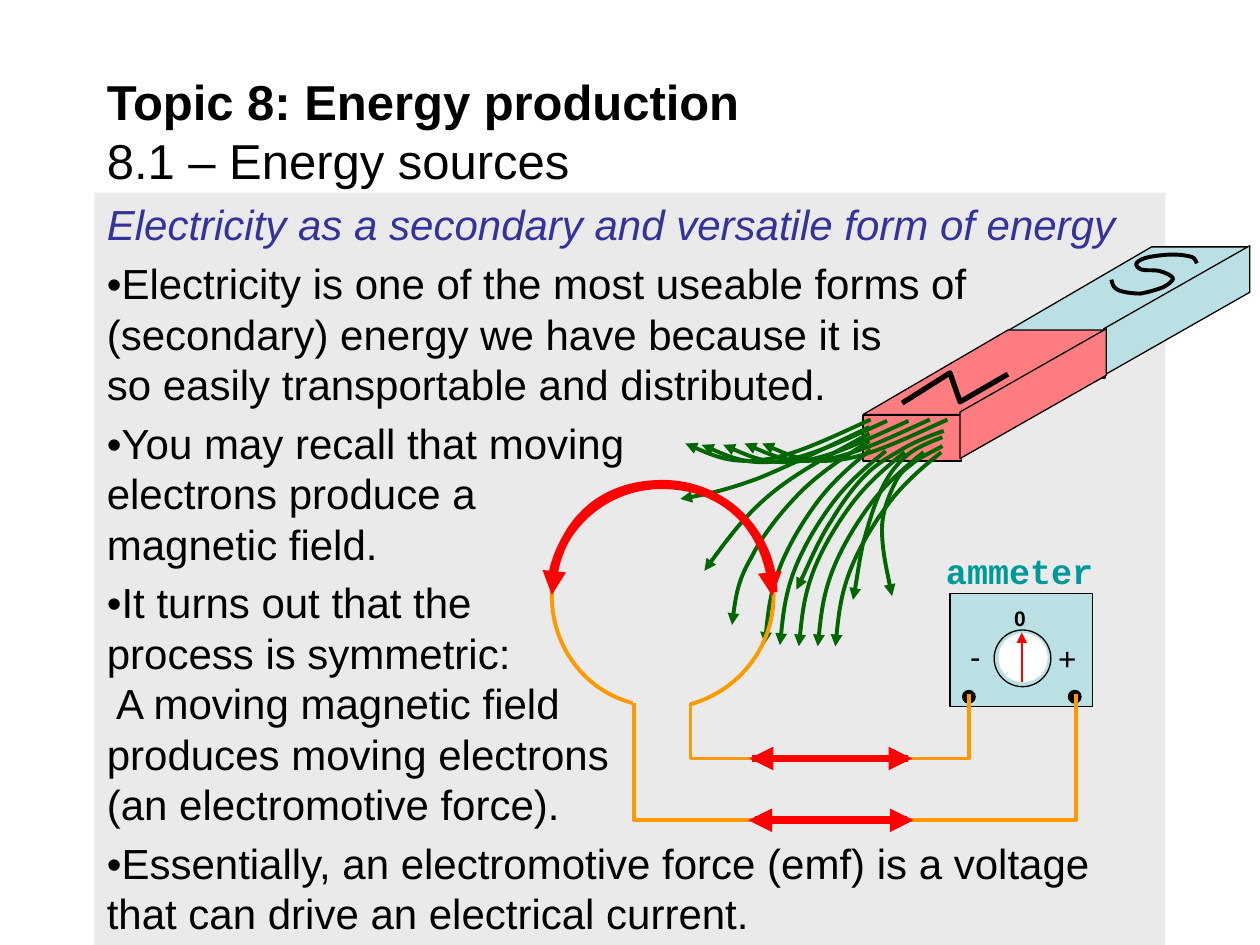
"""Build a slide on electricity with a magnet, its field, a wire loop and an ammeter."""
import math
import pptx
import pptx.util
import pptx.oxml.ns
import pptx.dml.color
import pptx.enum.shapes
import pptx.enum.text
import lxml.etree

COLS, ROWS = 10, 7.5
CELL = pptx.util.Inches(1)
KINDS = pptx.enum.shapes.MSO_SHAPE

THEME = {
    "ink": "000000", "panel": "EAEAEA", "head": "333399", "pale": "BBE0E3",
    "rose": "FF7C80", "field": "006600", "wire": "FF9900", "flow": "FF0000",
    "label": "009999", "white": "FFFFFF",
    "sans": "Arial", "mono": "Courier New",
    "title": 28, "body": 24, "name": 20, "sign": 18, "zero": 12,
    "thin": 0.75, "mid": 2.25, "bold": 3, "thick": 4.5, "hand": 1.5,
}

TITLE = ["Topic 8: Energy production\v", "8.1 – Energy sources"]
TOPIC = "Electricity as a secondary and versatile form of energy"
POINTS = [
    "•Electricity is one of the most useable forms of\v(secondary) energy we have "
    "because it is\vso easily transportable and distributed.",
    "•You may recall that moving\velectrons produce a\vmagnetic field.",
    "•It turns out that the\vprocess is symmetric:\v A moving magnetic field\v"
    "produces moving electrons\v(an electromotive force).",
    "•Essentially, an electromotive force (emf) is a voltage that can drive "
    "an electrical current.",
]

HALVES = [("pale", 7.99, 2.64), ("rose", 6.85, 3.3)]
FACES = [
    [(0, -0.01), (1.15, -0.68), (1.93, -0.68), (0.77, -0.01), (0, -0.01)],
    [(0.77, 0.34), (0.77, -0.03), (1.93, -0.69), (1.93, -0.32), (0.77, 0.34)],
]
NORTH = [(7.16, 3.2), (7.54, 2.96), (7.62, 3.19), (8, 2.97)]
SOUTH = [
    (9.5, 2.09), (9.49, 2.08), (9.49, 2.05), (9.46, 2.04), (9.43, 2.03), (9.37, 2.02),
    (9.31, 2.02), (9.25, 2.02), (9.17, 2.03), (9.12, 2.04), (9.07, 2.05), (9.03, 2.07),
    (9.02, 2.09), (9.01, 2.1), (9.03, 2.13), (9.06, 2.14), (9.09, 2.15), (9.16, 2.14),
    (9.2, 2.15), (9.24, 2.16), (9.31, 2.19), (9.31, 2.21), (9.31, 2.23), (9.27, 2.26),
    (9.23, 2.28), (9.18, 2.3), (9.11, 2.32), (9.05, 2.33), (8.99, 2.33), (8.91, 2.32),
    (8.87, 2.3), (8.83, 2.28), (8.83, 2.25), (8.82, 2.22),
]
DOWN = [(6.91, 3.57), (6.76, 3.69), (6.61, 3.82), (6.49, 3.98), (6.37, 4.14),
        (6.25, 4.34), (6.18, 4.53), (6.11, 4.72), (6.09, 4.92), (6.07, 5.11)]
SIDE = [(6.91, 3.33), (6.6, 3.47), (6.3, 3.62), (6.05, 3.65), (5.8, 3.68),
        (5.62, 3.6), (5.44, 3.52)]
STAY = [(0, 0)]
FIELD = [
    ([(6.9, 3.5), (6.71, 3.62), (6.51, 3.75), (6.36, 3.9), (6.2, 4.06), (6.05, 4.25),
      (5.96, 4.43), (5.86, 4.6), (5.83, 4.78), (5.81, 4.96)], STAY, -5.8),
    (DOWN, STAY, -3.7),
    ([(6.9, 3.44), (6.63, 3.59), (6.35, 3.73), (6.13, 3.91), (5.91, 4.09),
      (5.75, 4.31), (5.59, 4.53)], STAY, 0),
    ([(6.9, 3.39), (6.58, 3.54), (6.26, 3.7), (6.01, 3.8), (5.76, 3.89),
      (5.58, 3.93), (5.4, 3.96)], STAY, 0),
    (SIDE, STAY, 0),
    (DOWN, [(0.12, 0.01), (0.27, 0.02), (0.42, 0.02), (0.56, 0.02)], -3.7),
    (SIDE, [(0.13, 0.01), (0.3, 0.01), (0.47, 0), (0.61, 0)], 0),
    ([(7.48, 3.54), (7.39, 3.59), (7.3, 3.63), (7.24, 3.68), (7.18, 3.73), (7.14, 3.75),
      (7.1, 3.84), (7.06, 3.92), (7, 4.06), (7, 4.2), (7, 4.35), (7.04, 4.54),
      (7.08, 4.73)], STAY, 0),
    ([(7.48, 3.47), (7.43, 3.49), (7.26, 3.55), (7.18, 3.63), (7.1, 3.7), (7.03, 3.8),
      (6.98, 3.92), (6.93, 4.03), (6.89, 4.17), (6.85, 4.31), (6.82, 4.45),
      (6.79, 4.67), (6.77, 4.76)], STAY, 0),
    ([(7.49, 3.42), (7.43, 3.44), (7.27, 3.5), (7.17, 3.56), (7.07, 3.62), (6.97, 3.67),
      (6.87, 3.77), (6.78, 3.86), (6.69, 3.98), (6.6, 4.13), (6.5, 4.28),
      (6.38, 4.57), (6.32, 4.68)], STAY, 0),
]
LOOP = [(5.02, 5.58), (4.64, 5.48), (4.38, 5.13), (4.38, 4.73), (4.38, 4.25),
        (4.77, 3.85), (5.26, 3.85), (5.74, 3.85), (6.14, 4.25), (6.14, 4.73),
        (6.14, 5.13), (5.87, 5.48), (5.48, 5.59)]
SWINGS = [
    [(4.38, 4.58), (4.45, 4.16), (4.82, 3.85), (5.25, 3.85), (5.74, 3.85),
     (6.13, 4.25), (6.13, 4.73)],
    [(6.14, 4.7), (6.13, 4.22), (5.74, 3.84), (5.26, 3.84), (4.77, 3.84),
     (4.38, 4.23), (4.38, 4.72)],
]
LEADS = [(5.03, 6.51, 8.54), (5.48, 6.02, 7.69)]
FLOWS = [(5.97, 7.24, 6.02, "tail"), (5.94, 7.2, 6.51, "head"),
         (5.99, 7.25, 6.51, "tail"), (5.95, 7.21, 6.02, "head")]
DIAL = [
    (KINDS.RECTANGLE, (7.54, 4.71, 1.13, 0.9), "pale", "ink"),
    (KINDS.OVAL, (7.89, 5, 0.45, 0.45), None, "ink"),
]
STUDS = [
    (KINDS.OVAL, (7.64, 5.48, 0.1, 0.1), "ink", "ink"),
    (KINDS.OVAL, (8.48, 5.48, 0.1, 0.1), "ink", "ink"),
    (KINDS.OVAL, (7.93, 5.03, 0.38, 0.38), "white", "white"),
]
SIGNS = [("-", (7.6, 5.01, 0.31, 0.4), "sign", False),
         ("0", (7.95, 4.76, 0.42, 0.3), "zero", True),
         ("+", (8.3, 5.02, 0.31, 0.4), "sign", False)]

deck = pptx.Presentation()
deck.slide_width, deck.slide_height = int(COLS * CELL), int(ROWS * CELL)
slide = deck.slides.add_slide(deck.slide_layouts[6])
parts = slide.shapes


def grid(nums):
    return [round(n * CELL) for n in nums]


def tint(name):
    return pptx.dml.color.RGBColor.from_string(THEME[name])


def stroke(shape, line, width="thin", end=None):
    shape.line.color.rgb = tint(line)
    shape.line.width = pptx.util.Pt(THEME[width])
    if end:
        edge = shape.element.spPr.find(pptx.oxml.ns.qn("a:ln"))
        lxml.etree.SubElement(edge, pptx.oxml.ns.qn(f"a:{end}End"), type="triangle")


def paint(shape, fill):
    shape.shadow.inherit = False
    if fill:
        shape.fill.solid()
        shape.fill.fore_color.rgb = tint(fill)
    else:
        shape.fill.background()


def block(kind, box, fill=None, line=None):
    shape = parts.add_shape(kind, *grid(box))
    paint(shape, fill)
    if line:
        stroke(shape, line)
    else:
        shape.line.fill.background()
    return shape


def trace(dots, fill=None, line="ink", width="thin", end=None, close=False):
    dots = [grid(dot) for dot in dots]
    pen = parts.build_freeform(*dots[0], scale=1.0)
    pen.add_line_segments(dots[1:], close=close)
    shape = pen.convert_to_shape()
    paint(shape, fill)
    stroke(shape, line, width, end)
    return shape


def curve(knots, line="ink", width="mid", end=None, turn=0):
    shape = trace(spin(knots, -turn), None, line, width, end)
    shape.rotation = turn % 360
    legs = list(shape.element.iter(pptx.oxml.ns.qn("a:lnTo")))
    for k in range(0, len(legs), 3):
        bend = lxml.etree.Element(pptx.oxml.ns.qn("a:cubicBezTo"))
        legs[k].addprevious(bend)
        for leg in legs[k:k + 3]:
            bend.append(leg[0])
            leg.getparent().remove(leg)


def spin(knots, turn):
    if not turn:
        return knots
    cos, sin = math.cos(math.radians(turn)), math.sin(math.radians(turn))
    flat = [(x * cos - y * sin, x * sin + y * cos) for x, y in knots]
    mid = [(min(side) + max(side)) / 2 for side in zip(*flat)]
    hub = (mid[0] * cos + mid[1] * sin, mid[1] * cos - mid[0] * sin)
    return [(x - mid[0] + hub[0], y - mid[1] + hub[1]) for x, y in flat]


def arrow(start, stop, width, end):
    link = parts.add_connector(pptx.enum.shapes.MSO_CONNECTOR.STRAIGHT,
                               *grid(start + stop))
    stroke(link, "flow", width, end)
    lxml.etree.SubElement(link.element.spPr, pptx.oxml.ns.qn("a:effectLst"))


def write(para, text, size="body", font="sans", ink="ink", bold=False, slant=False, gap=0):
    para.alignment = pptx.enum.text.PP_ALIGN.LEFT
    para.space_before = pptx.util.Pt(gap * THEME[size])
    for n, piece in enumerate(text.split("\v")):
        if n:
            para.add_line_break()
        if piece:
            run = para.add_run()
            run.text = piece
            run.font.name, run.font.size = THEME[font], pptx.util.Pt(THEME[size])
            run.font.bold, run.font.italic = bold, slant
            run.font.color.rgb = tint(ink)


def frame(box, wrap=True):
    text = parts.add_textbox(*grid(box)).text_frame
    text.word_wrap = wrap
    return text


panel = block(KINDS.RECTANGLE, (0.75, 1.53, 8.5, 5.97), "panel").text_frame
panel.word_wrap = True
panel.vertical_anchor = pptx.enum.text.MSO_ANCHOR.TOP
write(panel.paragraphs[0], TOPIC, ink="head", slant=True, gap=0.2)
for point in POINTS:
    write(panel.add_paragraph(), point, gap=0.2)

title = frame((0.75, 0.58, 8.5, 0.91))
title.vertical_anchor = pptx.enum.text.MSO_ANCHOR.MIDDLE
for row, bold in zip(TITLE, (True, False)):
    write(title.paragraphs[0], row, size="title", bold=bold)

for item in DIAL:
    block(*item)
for sign, box, size, bold in SIGNS:
    write(frame(box).paragraphs[0], sign, size=size, bold=bold, gap=0.5)
for item in STUDS:
    block(*item)

for fill, x, y in HALVES:
    block(KINDS.RECTANGLE, (x, y, 0.78, 0.36), fill, "ink")
    for face in FACES:
        trace([(x + a, y + b) for a, b in face], fill, close=True)
trace(NORTH, width="bold")
curve(SOUTH)
for knots, shifts, turn in FIELD:
    for dx, dy in shifts:
        curve([(x + dx, y + dy) for x, y in knots], "field", end="tail", turn=turn)

curve(LOOP, "wire")
for left, low, right in LEADS:
    trace([(left, 5.58), (left, low), (right, low), (right, 5.51)], None, "wire", "mid")
for swing in SWINGS:
    curve(swing, "flow", "thick", "tail")
for left, right, y, end in FLOWS:
    arrow((left, y), (right, y), "thick", end)
write(frame((7.41, 4.31, 1.37, 0.43), wrap=False).paragraphs[0], "ammeter",
      size="name", font="mono", ink="label", bold=True)
arrow((8.11, 5.41), (8.11, 5.02), "hand", "tail")

deck.save("out.pptx")
